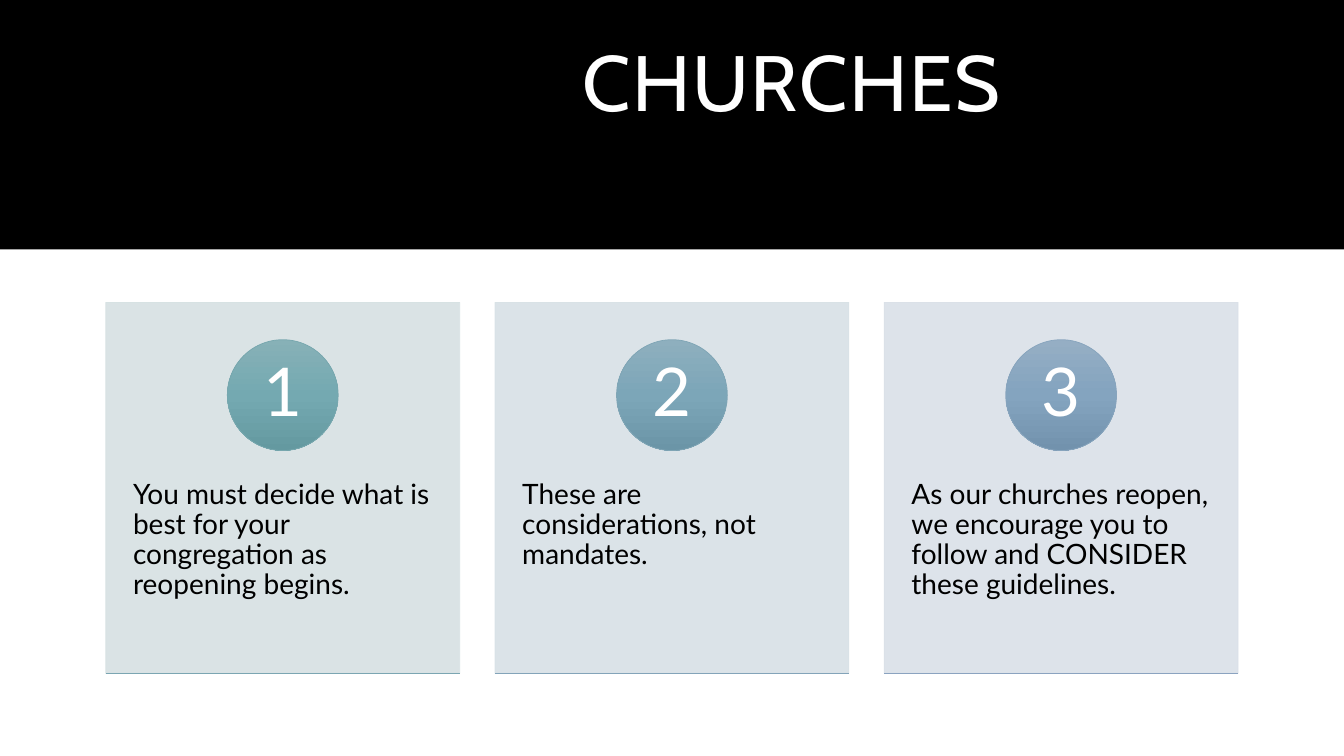
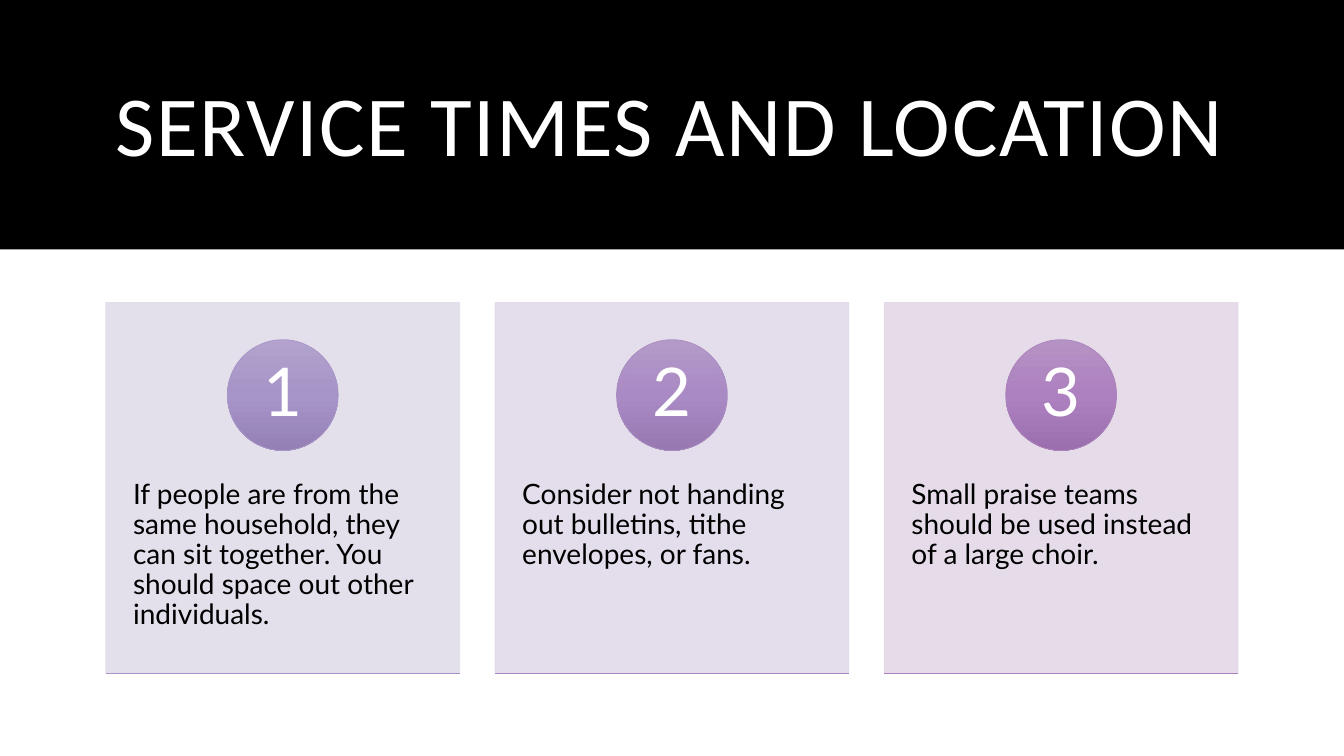
"""Build two title-band slides, each with a row of three numbered cards."""
from copy import deepcopy
from dataclasses import dataclass

from lxml import etree
from pptx import Presentation
from pptx.dml.color import RGBColor
from pptx.enum.shapes import MSO_CONNECTOR, MSO_SHAPE
from pptx.enum.text import MSO_ANCHOR, PP_ALIGN
from pptx.oxml.ns import qn
from pptx.util import Inches, Pt

RECTANGLE, OVAL = MSO_SHAPE.RECTANGLE, MSO_SHAPE.OVAL
STRAIGHT = MSO_CONNECTOR.STRAIGHT
TOP, MIDDLE = MSO_ANCHOR.TOP, MSO_ANCHOR.MIDDLE
LEFT, CENTER = PP_ALIGN.LEFT, PP_ALIGN.CENTER

SLIDE_WIDTH, SLIDE_HEIGHT = 13.333, 7.5
BLACK, WHITE = "000000", "FFFFFF"
BODY_FONT = "Lato"
MARGIN = 1.05
CONTENT_WIDTH = SLIDE_WIDTH - 2 * MARGIN
BAND_HEIGHT = 0.33 * SLIDE_HEIGHT
COLUMNS, GUTTER = 3, 0.35
CARD_WIDTH = (CONTENT_WIDTH - (COLUMNS - 1) * GUTTER) / COLUMNS
CARD_TOP, CARD_HEIGHT = 0.4 * SLIDE_HEIGHT, 3.68
BADGE_SIZE, BADGE_OFFSET = 1.1, 0.37
NUMBER_SIZE = 0.78
BODY_OFFSET, BODY_HEIGHT = 1.4, 2.21
LINE_WIDTH = 0.5


@dataclass(frozen=True)
class Box:
    """A rectangle in inches."""
    left: float
    top: float
    width: float
    height: float

    def lengths(self) -> tuple:
        """Return the four lengths for a shape call."""
        return tuple(Inches(value) for value in (self.left, self.top, self.width, self.height))


@dataclass(frozen=True)
class TextStyle:
    """The look of a one-paragraph text box, with insets in inches."""
    font: str
    size: float
    colour: str
    anchor: object = MIDDLE
    align: object = LEFT
    insets: tuple = (0.1, 0.05)
    tracking: float = 0


@dataclass(frozen=True)
class Title:
    """A slide title, its font and its place in the band."""
    text: str
    font: str
    size: float
    indent: float
    height: float


@dataclass(frozen=True)
class Card:
    """A numbered card with its colours."""
    text: str
    tint: str
    badge: tuple
    badge_line: str
    rule: str


BODY = TextStyle(BODY_FONT, 20, BLACK, anchor=TOP, insets=(0.27, 0.36))
NUMBER = TextStyle(BODY_FONT, 48, WHITE, align=CENTER, insets=(0.09, 0.01))

SLIDES = (
    (Title("CHURCHES", "Cabin", 56, 4.63, 1.01), (
        Card("You must decide what is best for your congregation as reopening begins.",
             "D6E1E3", ("87B1B7", "74A9B1", "6499A0"), "77A7AE", "7BA6B2"),
        Card("These are considerations, not mandates.",
             "D8E1E6", ("8EAFBE", "7CA6B8", "6B95A7"), "7FA5B5", "83A4B9"),
        Card("As our churches reopen, we encourage you to follow and CONSIDER these guidelines.",
             "DAE0E8", ("95AEC4", "84A4BF", "7292AD"), "87A4BD", "8BA3C0"),
    )),
    (Title("SERVICE TIMES AND LOCATION", "Calibri", 61, 0, 1.86), (
        Card("If people are from the same household, they can sit together. "
             "You should space out other individuals.",
             "E1DDEA", ("B2A2CD", "A794C8", "9480B5"), "A896C6", "A891C4"),
        Card("Consider not handing out bulletins, tithe envelopes, or fans.",
             "E2DAE9", ("B39AC8", "AA8AC4", "9778B1"), "A98DC1", "AA88BF"),
        Card("Small praise teams should be used instead of a large choir.",
             "E3D8E7", ("B592C4", "AD81BF", "9B6FAD"), "AC84BC", "AE7FBA"),
    )),
)


def colour(value: str) -> RGBColor:
    """Turn a hex string into a colour."""
    return RGBColor.from_string(value)


def add_panel(page, kind, box: Box, fill: str, line: str = ""):
    """Draw a flat shape, outlined if a line colour is given."""
    panel = page.shapes.add_shape(kind, *box.lengths())
    panel.shadow.inherit = False
    panel.fill.solid()
    panel.fill.fore_color.rgb = colour(fill)
    if line:
        panel.line.color.rgb = colour(line)
        panel.line.width = Pt(LINE_WIDTH)
    else:
        panel.line.fill.background()
    return panel


def set_opacity(panel, percent: int) -> None:
    """Make the fill and outline of a shape partly transparent."""
    for element in panel.element.spPr.iter(qn("a:srgbClr")):
        etree.SubElement(element, qn("a:alpha")).set("val", str(percent * 1000))


def set_gradient(panel, colours: tuple) -> None:
    """Fill a shape from top to bottom with evenly spaced colours."""
    panel.fill.gradient()
    panel.fill.gradient_angle = 270
    stop_list = panel.element.spPr.find(".//" + qn("a:gsLst"))
    while len(stop_list) < len(colours):
        stop_list.append(deepcopy(stop_list[-1]))
    for index, (stop, value) in enumerate(zip(panel.fill.gradient_stops, colours)):
        stop.position = index / (len(colours) - 1)
        stop.color.rgb = colour(value)


def add_text(page, box: Box, text: str, style: TextStyle) -> None:
    """Write one paragraph in a wrapped text box."""
    frame = page.shapes.add_textbox(*box.lengths()).text_frame
    frame.word_wrap = True
    frame.vertical_anchor = style.anchor
    across, down = (Inches(inset) for inset in style.insets)
    frame.margin_left = frame.margin_right = across
    frame.margin_top = frame.margin_bottom = down
    frame.text = text
    para = frame.paragraphs[0]
    para.alignment = style.align
    para.line_spacing = 0.9
    span = para.runs[0]
    span.font.name = style.font
    span.font.size = Pt(style.size)
    span.font.color.rgb = colour(style.colour)
    if style.tracking:
        span.font._element.set("spc", str(round(style.tracking * 100)))


def add_rule(page, left: float, top: float, width: float, value: str) -> None:
    """Draw a thin horizontal line."""
    rule = page.shapes.add_connector(
        STRAIGHT, Inches(left), Inches(top), Inches(left + width), Inches(top))
    rule.line.color.rgb = colour(value)
    rule.line.width = Pt(LINE_WIDTH)
    etree.SubElement(rule.element.spPr, qn("a:effectLst"))


def add_title(page, title: Title) -> None:
    """Draw the band and the title on it."""
    add_panel(page, RECTANGLE, Box(0, 0, SLIDE_WIDTH, BAND_HEIGHT), BLACK)
    box = Box(MARGIN + title.indent, 0.35, CONTENT_WIDTH - title.indent, title.height)
    add_text(page, box, title.text, TextStyle(title.font, title.size, WHITE, tracking=1.2))


def add_card(page, column: int, card: Card) -> None:
    """Draw one numbered card in its column."""
    left = MARGIN + column * (CARD_WIDTH + GUTTER)
    panel = add_panel(page, RECTANGLE, Box(left, CARD_TOP, CARD_WIDTH, CARD_HEIGHT),
                      card.tint, card.tint)
    set_opacity(panel, 90)
    add_text(page, Box(left, CARD_TOP + BODY_OFFSET, CARD_WIDTH, BODY_HEIGHT), card.text, BODY)
    badge_left, badge_top = left + (CARD_WIDTH - BADGE_SIZE) / 2, CARD_TOP + BADGE_OFFSET
    badge = add_panel(page, OVAL, Box(badge_left, badge_top, BADGE_SIZE, BADGE_SIZE),
                      card.badge[0], card.badge_line)
    set_gradient(badge, card.badge)
    inset = (BADGE_SIZE - NUMBER_SIZE) / 2
    add_text(page, Box(badge_left + inset, badge_top + inset, NUMBER_SIZE, NUMBER_SIZE),
             str(column + 1), NUMBER)
    add_rule(page, left, CARD_TOP + CARD_HEIGHT, CARD_WIDTH, card.rule)


def main() -> None:
    """Build and save the deck."""
    deck = Presentation()
    deck.slide_width, deck.slide_height = Inches(SLIDE_WIDTH), Inches(SLIDE_HEIGHT)
    for title, cards in SLIDES:
        page = deck.slides.add_slide(deck.slide_layouts[6])
        page.background.fill.solid()
        page.background.fill.fore_color.rgb = colour(WHITE)
        add_title(page, title)
        for column, card in enumerate(cards):
            add_card(page, column, card)
    deck.save("out.pptx")


if __name__ == "__main__":
    main()
